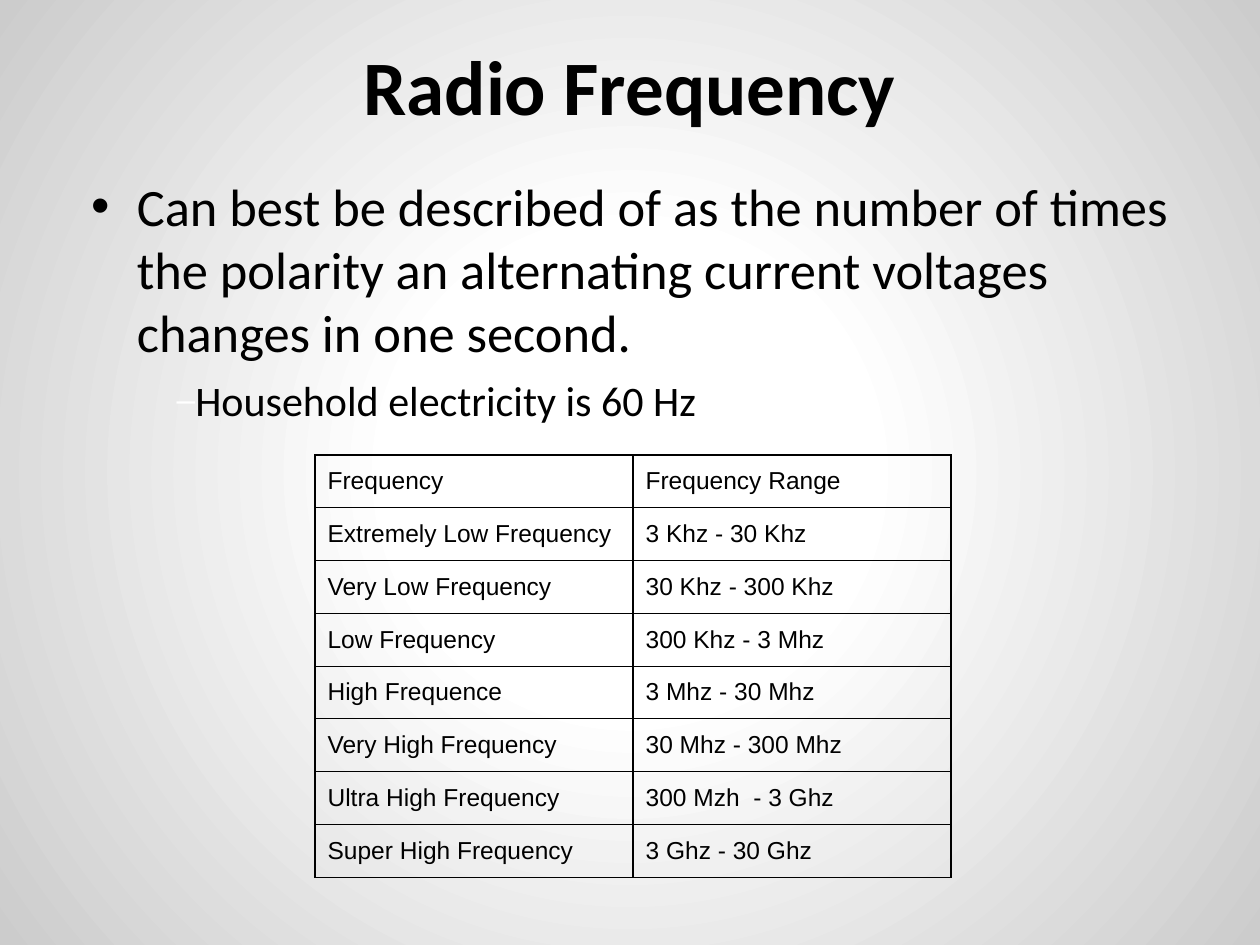
from dataclasses import dataclass

from lxml.etree import SubElement
from pptx import Presentation
from pptx.dml.color import RGBColor
from pptx.enum.text import MSO_ANCHOR, MSO_AUTO_SIZE, PP_ALIGN
from pptx.oxml import parse_xml
from pptx.oxml.ns import nsdecls, qn
from pptx.util import Pt

BLACK, WHITE, GREY = "000000", "FFFFFF", "CCCCCC"
COL, ROW = 181.75, 30.1


@dataclass
class Point:
    text: str
    level: int
    size: float
    left: float
    hang: float
    mark: str
    color: str
    scale: int


@dataclass
class Band:
    name: str
    span: str


POINTS = [
    Point("Can best be described of as the number of times the polarity "
          "an alternating current voltages changes in one second.",
          0, 30, 27, 26, "•", BLACK, 100),
    Point("Household electricity is 60 Hz", 1, 24, 58.3, 8.6, "–", WHITE, 80),
]

BANDS = [
    Band("Frequency", "Frequency Range"),
    Band("Extremely Low Frequency", "3 Khz - 30 Khz"),
    Band("Very Low Frequency", "30 Khz - 300 Khz"),
    Band("Low Frequency", "300 Khz - 3 Mhz"),
    Band("High Frequence", "3 Mhz - 30 Mhz"),
    Band("Very High Frequency", "30 Mhz - 300 Mhz"),
    Band("Ultra High Frequency", "300 Mzh  - 3 Ghz"),
    Band("Super High Frequency", "3 Ghz - 30 Ghz"),
]


def rgb(color: str) -> RGBColor:
    return RGBColor.from_string(color)


def style(para, face: str, size: float, bold: bool = False) -> None:
    font = para.font
    font.name, font.size, font.bold = face, Pt(size), bold
    font.color.rgb = rgb(BLACK)


def place(shape, left: float, top: float, width: float, height: float) -> None:
    shape.left, shape.top = Pt(left), Pt(top)
    shape.width, shape.height = Pt(width), Pt(height)
    shape.text_frame.auto_size = MSO_AUTO_SIZE.NONE


def shade(slide) -> None:
    """Fill the background with a round gradient, light in the middle."""
    slide.background.fill.gradient()
    old = next(slide.element.iter(qn("a:gradFill")))
    stops = "".join(
        f'<a:gs pos="{pos * 1000}"><a:srgbClr val="{color}"/></a:gs>'
        for pos, color in ((0, WHITE), (30, WHITE), (100, GREY)))
    new = parse_xml(
        f'<a:gradFill {nsdecls("a")} rotWithShape="1"><a:gsLst>{stops}</a:gsLst>'
        '<a:path path="circle"><a:fillToRect l="50000" t="50000" '
        'r="50000" b="50000"/></a:path></a:gradFill>')
    old.getparent().replace(old, new)


def bullet(para, point: Point) -> None:
    props = para._p.get_or_add_pPr()
    props.set("marL", str(Pt(point.left)))
    props.set("indent", str(-Pt(point.hang)))
    tint = SubElement(props, qn("a:buClr"))
    SubElement(tint, qn("a:srgbClr"), val=point.color)
    SubElement(props, qn("a:buSzPct"), val=str(point.scale * 1000))
    SubElement(props, qn("a:buFont"), typeface="Arial")
    SubElement(props, qn("a:buChar"), char=point.mark)


def add_points(frame, points: list[Point]) -> None:
    for i, point in enumerate(points):
        para = frame.add_paragraph() if i else frame.paragraphs[0]
        para.text, para.level = point.text, point.level
        bullet(para, point)
        para.space_before = Pt(6.4)
        style(para, "Calibri", point.size)


def border(cell) -> None:
    props = cell._tc.get_or_add_tcPr()
    for side in ("lnL", "lnR", "lnT", "lnB"):
        line = SubElement(props, qn(f"a:{side}"), w=str(Pt(0.75)))
        fill = SubElement(line, qn("a:solidFill"))
        SubElement(fill, qn("a:srgbClr"), val=BLACK)


def fill_cell(cell, text: str) -> None:
    cell.text = text
    cell.margin_left = cell.margin_right = Pt(7.2)
    cell.margin_top = cell.margin_bottom = Pt(7.2)
    border(cell)
    cell.fill.background()
    style(cell.text_frame.paragraphs[0], "Arial", 14)


def add_bands(slide, bands: list[Band]) -> None:
    table = slide.shapes.add_table(
        len(bands), 2, Pt(180), Pt(260), Pt(2 * COL), Pt(len(bands) * ROW)).table
    table.first_row = table.horz_banding = False
    for col in table.columns:
        col.width = Pt(COL)
    for r, band in enumerate(bands):
        table.rows[r].height = Pt(ROW)
        for c, text in enumerate((band.name, band.span)):
            fill_cell(table.cell(r, c), text)


def main() -> None:
    deck = Presentation()
    deck.slide_width, deck.slide_height = Pt(720), Pt(540)
    slide = deck.slides.add_slide(deck.slide_layouts[1])
    shade(slide)

    title, body = slide.shapes.title, slide.placeholders[1]
    place(title, 36, 3.6, 648, 90)
    title.text_frame.text = "Radio Frequency"
    title.text_frame.vertical_anchor = MSO_ANCHOR.MIDDLE
    head = title.text_frame.paragraphs[0]
    head.alignment = PP_ALIGN.CENTER
    style(head, "Calibri", 44, bold=True)

    place(body, 44, 96, 648, 174)
    add_points(body.text_frame, POINTS)
    add_bands(slide, BANDS)
    deck.save("out.pptx")


if __name__ == "__main__":
    main()
